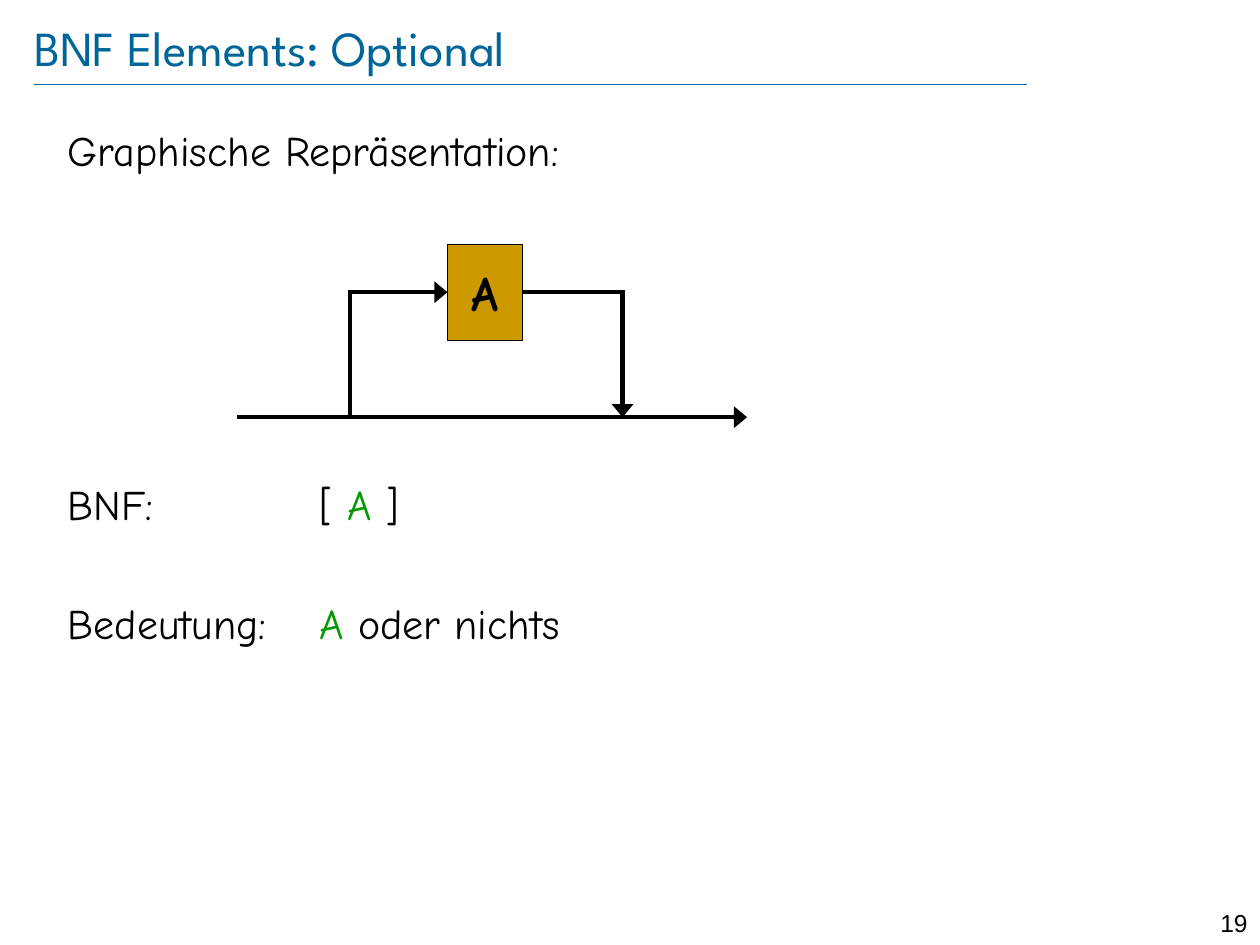
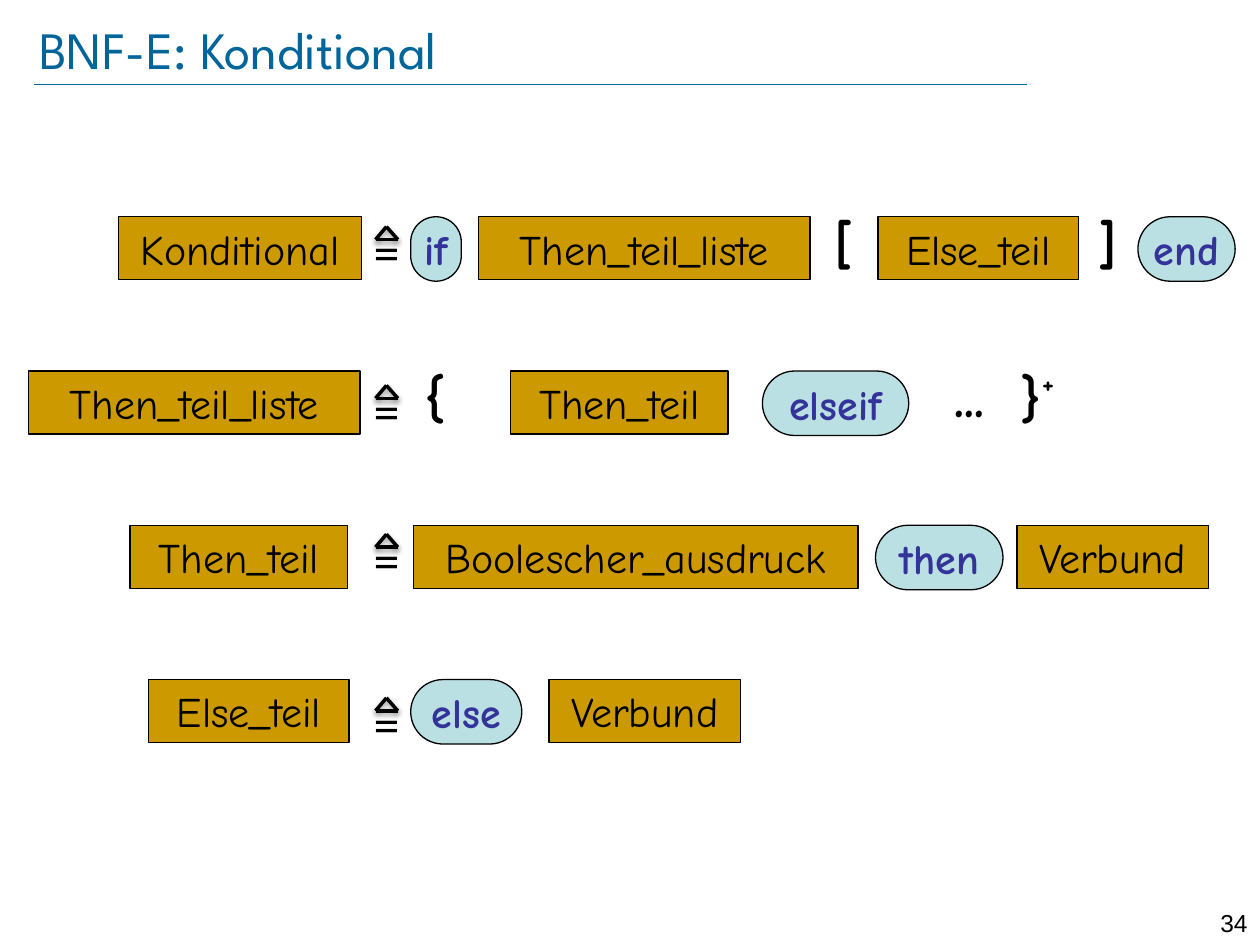
from lxml.etree import SubElement
from pptx import Presentation
from pptx.dml.color import RGBColor
from pptx.enum.shapes import MSO_CONNECTOR, MSO_SHAPE
from pptx.enum.text import MSO_ANCHOR, PP_ALIGN
from pptx.oxml.ns import qn
from pptx.util import Cm, Pt

BLACK, BLUE, GREEN = "000000", "006699", "009900"
GOLD, PALE, INDIGO = "CC9900", "BBE0E3", "333399"
BODY, TITLE, NUMBER, SIGN = "Comic Neue", "League Spartan", "Arial", "Lato"


def color(hex_string):
    return RGBColor.from_string(hex_string)


class Deck:
    """Holds the shared style and the slide being filled."""

    def __init__(self):
        self.prs = Presentation()
        self.prs.slide_width, self.prs.slide_height = Cm(25.4), Cm(19.05)
        self.s = None

    def slide(self, title, number, left, height, size):
        self.s = self.prs.slides.add_slide(self.prs.slide_layouts[6])
        self.line((0.69, 1.7), (20.7, 1.7), 0.25, BLUE)
        self.text(number, 24, 18.19, 1.4, 0.61, 14, NUMBER, align=PP_ALIGN.RIGHT)
        sp = self.text(title, left, 0.33, 24, height, size, TITLE, BLUE)
        tf = sp.text_frame
        tf.vertical_anchor = MSO_ANCHOR.MIDDLE
        tf.margin_left = tf.margin_right = tf.margin_top = tf.margin_bottom = 0

    def font(self, r, size, name=BODY, fill=BLACK, bold=False):
        r.font.size, r.font.name, r.font.bold = Pt(size), name, bold
        r.font.color.rgb = color(fill)

    def text(self, text, x, y, w, h, size, name=BODY, fill=BLACK, bold=False,
             align=PP_ALIGN.LEFT, wrap=True):
        sp = self.s.shapes.add_textbox(Cm(x), Cm(y), Cm(w), Cm(h))
        tf = sp.text_frame
        tf.text, tf.word_wrap = text, wrap
        p = tf.paragraphs[0]
        p.alignment = align
        self.font(p.runs[0], size, name, fill, bold)
        return sp

    def body(self, rows, x, y, w, h, tab):
        """Rows are (space before in points, [(text, colour), ...])."""
        tf = self.s.shapes.add_textbox(Cm(x), Cm(y), Cm(w), Cm(h)).text_frame
        tf.word_wrap = True
        for i, (space, parts) in enumerate(rows):
            p = tf.add_paragraph() if i else tf.paragraphs[0]
            p.space_before = Pt(space)
            stops = SubElement(p._p.get_or_add_pPr(), qn("a:tabLst"))
            SubElement(stops, qn("a:tab"), pos=str(Cm(tab)), algn="l")
            for text, fill in parts:
                r = p.add_run()
                r.text = text
                self.font(r, 24, fill=fill)

    def box(self, text, x, y, w, h, size=24, bold=False, kind=MSO_SHAPE.RECTANGLE,
            fill=GOLD, text_fill=BLACK):
        sp = self.s.shapes.add_shape(kind, Cm(x), Cm(y), Cm(w), Cm(h))
        sp.shadow.inherit = False
        sp.fill.solid()
        sp.fill.fore_color.rgb = color(fill)
        sp.line.color.rgb, sp.line.width = color(BLACK), Pt(0.75)
        tf = sp.text_frame
        tf.text, tf.word_wrap = text, False
        tf.vertical_anchor = MSO_ANCHOR.MIDDLE
        p = tf.paragraphs[0]
        p.alignment = PP_ALIGN.CENTER
        self.font(p.runs[0], size, fill=text_fill, bold=bold)
        return sp

    def keyword(self, text, x, y, w):
        sp = self.box(text, x, y, w, 1.3, bold=True, kind=MSO_SHAPE.ROUNDED_RECTANGLE,
                      fill=PALE, text_fill=INDIGO)
        sp.adjustments[0] = 0.5

    def symbol(self, text, x, y, w):
        return self.text(text, x, y - 0.31, w, 1.63, 32, bold=True,
                         align=PP_ALIGN.CENTER, wrap=False)

    def line(self, start, end, width, fill=BLACK, arrow=False, shadow=False):
        ends = [Cm(v) for v in (*start, *end)]
        c = self.s.shapes.add_connector(MSO_CONNECTOR.STRAIGHT, *ends)
        c.line.color.rgb, c.line.width = color(fill), Pt(width)
        if arrow:
            SubElement(c.line._get_or_add_ln(), qn("a:tailEnd"),
                       type="triangle", w="lg", len="med")
        effects = SubElement(c._element.spPr, qn("a:effectLst"))
        if shadow:
            outer = SubElement(effects, qn("a:outerShdw"), blurRad=str(Pt(3.1)),
                               dist=str(Pt(1.6)), dir="5400000", rotWithShape="0")
            black = SubElement(outer, qn("a:srgbClr"), val=BLACK)
            SubElement(black, qn("a:alpha"), val="38000")
        return c

    def track(self, *points):
        """Chain of lines with an arrowhead at its end."""
        for start, end in zip(points, points[1:]):
            c = self.line(start, end, 2.5, arrow=end == points[-1])
            c.line._get_or_add_ln().set("cap", "sq")

    def defined_as(self, y):
        """Equals sign with a small triangle above it."""
        self.text("=", 7.26, y, 1.07, 1.45, 28, SIGN)
        apex, left, right = (7.79, y + 0.2), (7.57, y + 0.46), (8.02, y + 0.46)
        for start, end in ((apex, right), (apex, left), (right, left)):
            self.line(start, end, 2, shadow=True)


def optional_slide(deck):
    deck.slide("BNF Elements: Optional", "19", left=0.69, height=1.22, size=28)
    deck.body([
        (0, [("Graphische Repräsentation:", BLACK)]),
        (173.5, [("BNF:\t[ ", BLACK), ("A ", GREEN), ("]", BLACK)]),
        (39.2, [("Bedeutung:\t", BLACK), ("A ", GREEN), ("oder nichts", BLACK)]),
    ], 1.12, 2.39, 24.2, 11.6, tab=5.08)

    # Syntax diagram: main track, branch through A and back
    low, high, fork, join = 8.41, 5.89, 7.06, 12.55
    deck.track((4.83, low), (fork, low), (join, low), (15.06, low))
    deck.track((fork, low), (fork, high), (9.02, high))
    deck.track((10.54, high), (join, high), (join, low))
    deck.box("A", 9.02, 4.93, 1.52, 1.93, size=28, bold=True)


def conditional_slide(deck):
    deck.slide("BNF-E: Konditional", "34", left=0.79, height=1.3, size=30)
    widths = {"Konditional": 4.9, "Then_teil_liste": 6.68, "Else_teil": 4.04,
              "Then_teil": 4.39, "Boolescher_ausdruck": 8.97, "Verbund": 3.86,
              "if": 1.02, "end": 1.96, "elseif": 2.95, "then": 2.57, "else": 2.24,
              "[": 0.94, "]": 0.94, "{": 0.97, "...": 2.01, "}": 1.35}
    keywords = {"if", "end", "elseif", "then", "else"}
    # Each rule: shift of its equals sign, then elements with left edges
    rules = [
        (0, [("Konditional", 2.39), ("if", 8.28), ("Then_teil_liste", 9.65),
             ("[", 16.54), ("Else_teil", 17.7), ("]", 21.87), ("end", 22.94)]),
        (0.09, [("Then_teil_liste", 0.58), ("{", 8.28), ("Then_teil", 10.29),
                ("elseif", 15.37), ("...", 18.54), ("}", 20.24)]),
        (-0.02, [("Then_teil", 2.62), ("Boolescher_ausdruck", 8.33),
                 ("then", 17.65), ("Verbund", 20.5)]),
        (0.17, [("Else_teil", 3), ("else", 8.28), ("Verbund", 11.07)]),
    ]
    for i, (shift, elements) in enumerate(rules):
        y = 4.37 + 3.11 * i
        for name, x in elements:
            if name in keywords:
                deck.keyword(name, x, y, widths[name])
            elif name[0].isalpha():
                deck.box(name, x, y, widths[name], 1.27)
            else:
                sp = deck.symbol(name, x, y, widths[name])
                if name == "}":
                    r = sp.text_frame.paragraphs[0].add_run()
                    r.text = "+"
                    deck.font(r, 28, bold=True)
                    r.font._element.set("baseline", "50000")
        deck.defined_as(y + shift)


def main():
    deck = Deck()
    optional_slide(deck)
    conditional_slide(deck)
    deck.prs.save("out.pptx")


if __name__ == "__main__":
    main()
